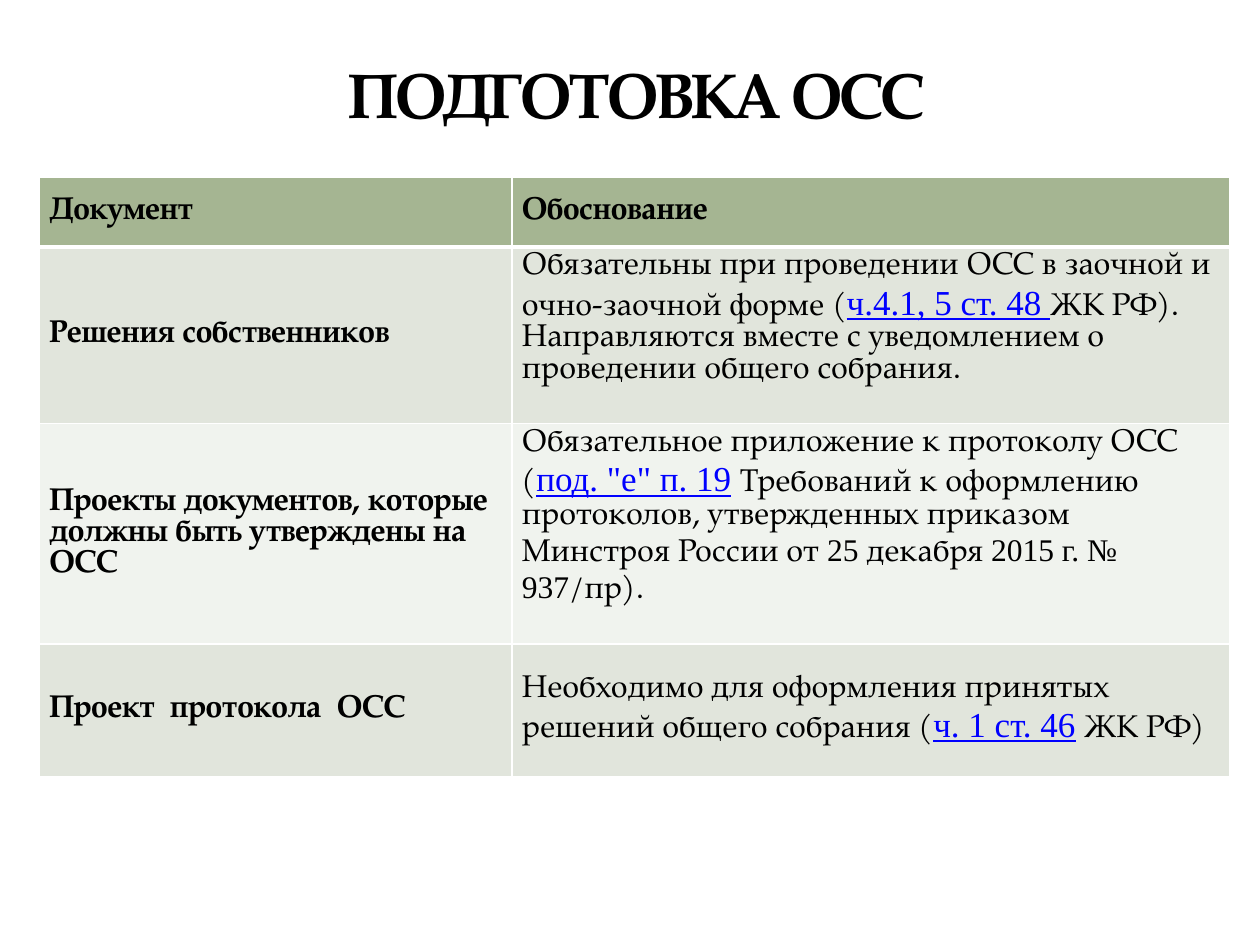
import pptx
import pptx.dml.color
import pptx.enum.text
import pptx.oxml.ns
import pptx.util
from lxml import etree

Pt = pptx.util.Pt
RGBColor = pptx.dml.color.RGBColor
ANCHOR = pptx.enum.text.MSO_ANCHOR

BLACK = RGBColor(0x00, 0x00, 0x00)
BLUE = RGBColor(0x00, 0x00, 0xFF)
WHITE = RGBColor(0xFF, 0xFF, 0xFF)
HEADER_GREEN = RGBColor(0xA5, 0xB5, 0x92)
BAND_DARK = RGBColor(0xE1, 0xE5, 0xDC)
BAND_LIGHT = RGBColor(0xF0, 0xF3, 0xEE)

MAIN_FONT = "TeX Gyre Pagella"
SERIF_FONT = "Times New Roman"

BOLD = {"bold": True}
LINK = {"size": 20, "font": SERIF_FONT, "color": BLUE, "underline": True}
SERIF = {"font": SERIF_FONT}

COLUMN_WIDTHS = [270, 410.4]
ROW_HEIGHTS = [39.6, 101, 126, 75.6]
SPARE_LINE = 18  # room kept free under the longer texts

# Each row: left spans, right spans, fill, extra bottom margin on the right
ROWS = [
    ([("Документ", BOLD)], [("Обоснование", BOLD)], HEADER_GREEN, 0),
    (
        [("Решения собственников", BOLD)],
        [
            ("Обязательны при проведении ОСС в заочной и очно-заочной форме (", {}),
            ("ч.4.1, 5 ст. 48 ", LINK),
            ("ЖК РФ). Направляются вместе с уведомлением о проведении "
             "общего собрания.", {}),
        ],
        BAND_DARK, SPARE_LINE,
    ),
    (
        [("Проекты документов, которые должны быть утверждены на ОСС", BOLD)],
        [
            ("Обязательное приложение к протоколу ОСС (", {}),
            ('под. "е" п. 19', LINK),
            (" ", {"size": 20, "color": BLUE}),
            ("Требований к оформлению протоколов, утвержденных приказом "
             "Минстроя России от ", {}),
            ("25 ", SERIF),
            ("декабря ", {}),
            ("2015 г. № 937", SERIF),
            ("/пр).", {}),
        ],
        BAND_LIGHT, SPARE_LINE,
    ),
    (
        [("Проект  протокола  ОСС", BOLD)],
        [
            ("Необходимо для оформления принятых решений общего собрания (", {}),
            ("ч. 1 ст. 46", LINK),
            (" ", {"size": 20, "font": SERIF_FONT, "color": BLUE}),
            ("ЖК РФ)", {}),
        ],
        BAND_DARK, 0,
    ),
]


def add_span(para, text, size=18, font=MAIN_FONT, color=BLACK, bold=False,
             underline=False, spacing=None):
    span = para.add_run()
    span.text = text
    span.font.size = Pt(size)
    span.font.name = font
    span.font.color.rgb = color
    span.font.bold = bold
    span.font.underline = underline
    if spacing is not None:
        span.font._element.set("spc", str(int(spacing * 100)))


def set_border(cell, index, side, width):
    """Draw one white cell edge; edges must come before the fill."""
    line = etree.Element(pptx.oxml.ns.qn("a:ln" + side), w=str(Pt(width)))
    fill = etree.SubElement(line, pptx.oxml.ns.qn("a:solidFill"))
    etree.SubElement(fill, pptx.oxml.ns.qn("a:srgbClr"), val=str(WHITE))
    cell._tc.get_or_add_tcPr().insert(index, line)


def fill_cell(cell, spans, color, bottom_width, top_width, spare=0):
    cell.fill.solid()
    cell.fill.fore_color.rgb = color
    cell.vertical_anchor = ANCHOR.MIDDLE
    cell.margin_left = cell.margin_right = Pt(5.76)
    cell.margin_top = Pt(2.88)
    cell.margin_bottom = Pt(2.88 + spare)
    widths = {"L": 1, "R": 1, "T": top_width, "B": bottom_width}
    for index, (side, width) in enumerate(widths.items()):
        set_border(cell, index, side, width)
    para = cell.text_frame.paragraphs[0]
    for text, style in spans:
        add_span(para, text, **style)


def add_title(page, text):
    box = page.shapes.title
    box.left, box.top, box.width, box.height = Pt(39.6), Pt(16.56), Pt(648), Pt(61.92)
    box.text_frame.vertical_anchor = ANCHOR.BOTTOM
    para = box.text_frame.paragraphs[0]
    para.alignment = pptx.enum.text.PP_ALIGN.CENTER
    add_span(para, text, size=36, bold=True, spacing=-1)


def add_document_table(page):
    table = page.shapes.add_table(
        len(ROWS), len(COLUMN_WIDTHS), Pt(22.5), Pt(101.5),
        Pt(sum(COLUMN_WIDTHS)), Pt(sum(ROW_HEIGHTS))).table
    for column, width in zip(table.columns, COLUMN_WIDTHS):
        column.width = Pt(width)
    for number, (left, right, color, spare) in enumerate(ROWS):
        table.rows[number].height = Pt(ROW_HEIGHTS[number])
        # The rule under the header is thicker than the others
        bottom = 3 if number == 0 else 1
        top = 3 if number == 1 else 1
        fill_cell(table.cell(number, 0), left, color, bottom, top)
        fill_cell(table.cell(number, 1), right, color, bottom, top, spare)


def main():
    deck = pptx.Presentation()
    deck.slide_width, deck.slide_height = Pt(720), Pt(540)
    page = deck.slides.add_slide(deck.slide_layouts[5])
    add_title(page, "ПОДГОТОВКА ОСС")
    add_document_table(page)
    deck.save("out.pptx")


if __name__ == "__main__":
    main()
